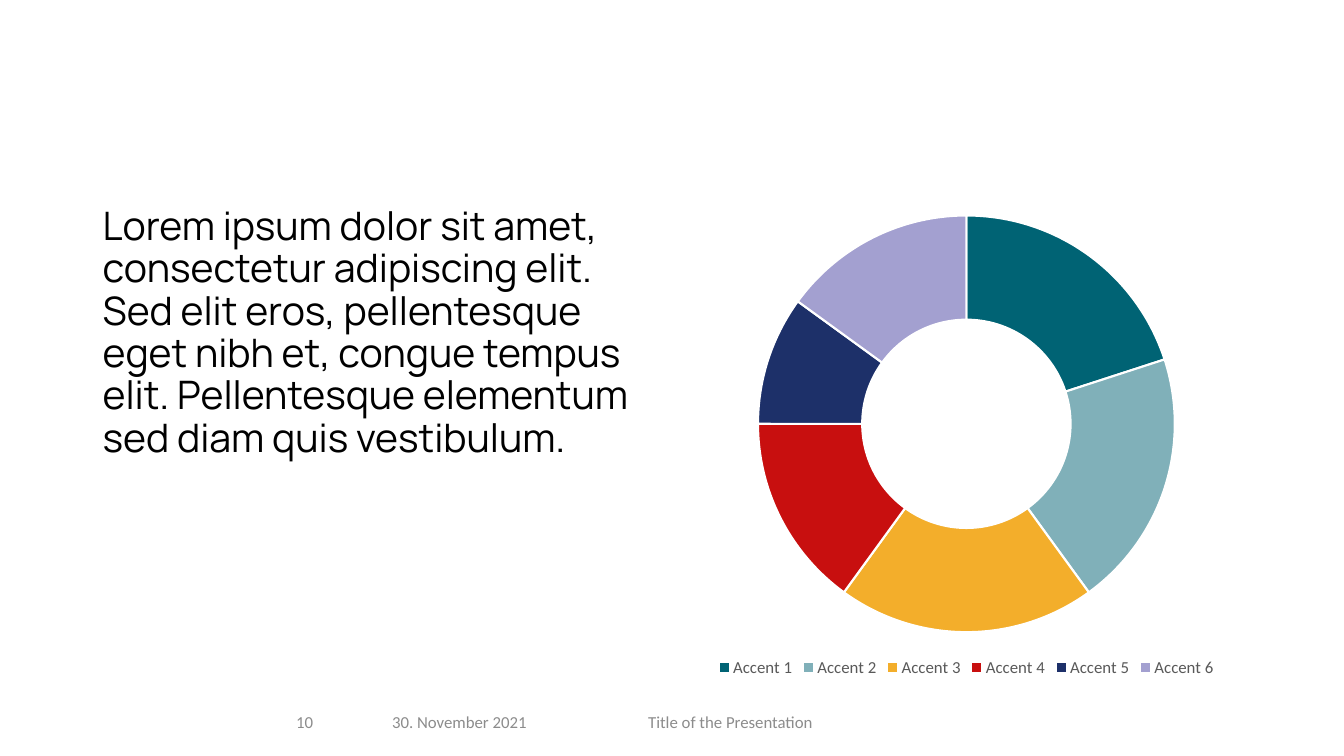
from dataclasses import dataclass

from pptx import Presentation
from pptx import util as u
from pptx.chart.data import CategoryChartData
from pptx.dml.color import RGBColor
from pptx.enum import chart as ch, text


@dataclass(frozen=True)
class Theme:
    body_font: str = "Manrope"
    small_font: str = "Calibri"
    body_size: int = 28
    small_size: int = 12
    chart_size: int = 10
    ink: str = "000000"
    legend: str = "595959"
    footer: str = "8C8C8C"
    paper: str = "FFFFFF"
    accents: tuple = ("006374", "80B0B9", "F3AE2B", "C80F0F", "1D3069", "A3A0D0")


THEME = Theme()
SHARES = (20, 20, 20, 15, 10, 15)
STATEMENT = (
    "Lorem ipsum dolor sit amet, consectetur adipiscing elit. "
    "Sed elit eros, pellentesque eget nibh et, congue tempus elit. "
    "Pellentesque elementum sed diam quis vestibulum."
)


def set_font(font, name, size, color):
    font.name = name
    font.size = u.Pt(size)
    font.color.rgb = RGBColor.from_string(color)


def add_text(slide, box, wording, font, size, color, anchor):
    """Add a wrapped one-paragraph text box and return its paragraph."""
    frame = slide.shapes.add_textbox(*map(u.Inches, box)).text_frame
    frame.word_wrap = True
    frame.vertical_anchor = anchor
    paragraph = frame.paragraphs[0]
    paragraph.text = wording
    set_font(paragraph.font, font, size, color)
    return paragraph


def add_statement(slide, box):
    statement = add_text(slide, box, STATEMENT, THEME.body_font, THEME.body_size,
                         THEME.ink, text.MSO_ANCHOR.TOP)
    statement.line_spacing = 0.9


def add_doughnut(slide, box):
    shares = CategoryChartData()
    shares.categories = [f"Accent {n}" for n in range(1, len(SHARES) + 1)]
    shares.add_series("Series 1", SHARES)
    doughnut = slide.shapes.add_chart(
        ch.XL_CHART_TYPE.DOUGHNUT, *map(u.Inches, box), shares).chart
    doughnut.has_title = False
    set_font(doughnut.font, THEME.small_font, THEME.chart_size, THEME.ink)

    # Legend below the ring
    doughnut.has_legend = True
    doughnut.legend.position = ch.XL_LEGEND_POSITION.BOTTOM
    doughnut.legend.include_in_layout = False
    set_font(doughnut.legend.font, THEME.small_font, THEME.small_size, THEME.legend)

    # One accent colour per segment, parted by white lines
    ring = doughnut.plots[0]
    ring.vary_by_categories = True
    for index, accent in enumerate(THEME.accents):
        segment = ring.series[0].points[index].format
        segment.fill.solid()
        segment.fill.fore_color.rgb = RGBColor.from_string(accent)
        segment.line.color.rgb = RGBColor.from_string(THEME.paper)
        segment.line.width = u.Pt(1.5)


def add_footer(slide, box):
    left, top, _, height = box
    # Offset from the footer's left edge, width, wording
    fields = (
        (0, 0.86, "10"),
        (0.95, 2.46, "30. November 2021"),
        (3.49, 5.34, "Title of the Presentation"),
    )
    for offset, width, wording in fields:
        add_text(slide, (left + offset, top, width, height), wording,
                 THEME.small_font, THEME.small_size, THEME.footer,
                 text.MSO_ANCHOR.MIDDLE)


def main():
    deck = Presentation()
    deck.slide_width, deck.slide_height = u.Inches(13.33), u.Inches(7.5)
    slide = deck.slides.add_slide(deck.slide_layouts[6])

    # Two equal columns above the footer
    top, width, height = 2, 5.67, 4.76
    add_statement(slide, (0.92, top, width, height))
    add_doughnut(slide, (6.75, top, width, height))
    add_footer(slide, (2.84, 6.96, 8.83, 0.4))
    deck.save("out.pptx")


if __name__ == "__main__":
    main()
